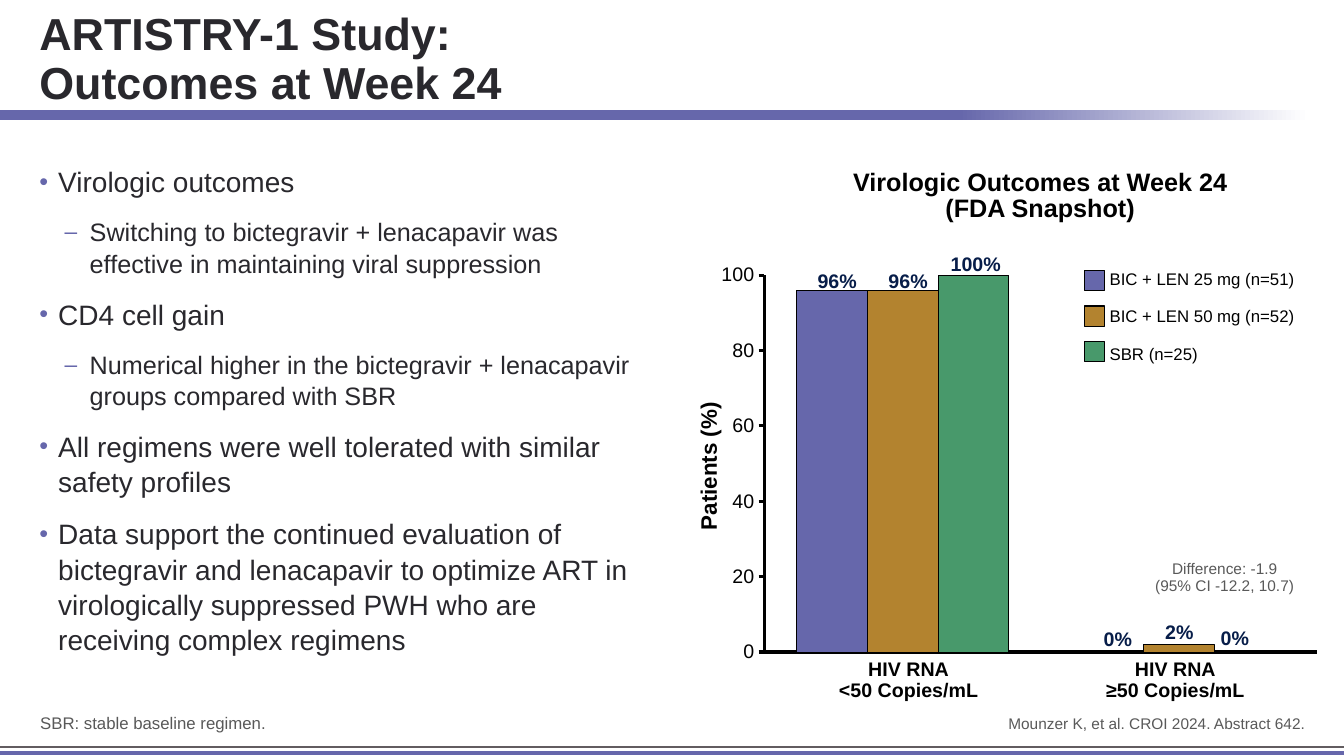
from lxml import etree
from pptx import Presentation
from pptx.chart.data import CategoryChartData as Data
from pptx.dml.color import RGBColor as RGB
from pptx.enum.chart import XL_CHART_TYPE as Kind, XL_TICK_LABEL_POSITION as Lab, XL_TICK_MARK as Tick
from pptx.enum.shapes import MSO_CONNECTOR as Conn, MSO_SHAPE as Geo
from pptx.enum.text import MSO_ANCHOR as Anchor, PP_ALIGN as Align
from pptx.oxml import parse_xml
from pptx.oxml.ns import nsdecls, qn
from pptx.util import Pt

FACE = "Arial"
PURPLE, GOLD, GREEN = "6667AB", "B3832F", "48996B"
BLACK, DARK, GREY, NAVY = "000000", "29282D", "595959", "071D49"
L, C, R = Align.LEFT, Align.CENTER, Align.RIGHT

BODY = [
    (0, "Virologic outcomes"),
    (1, "Switching to bictegravir + lenacapavir was effective in maintaining viral suppression"),
    (0, "CD4 cell gain"),
    (1, "Numerical higher in the bictegravir + lenacapavir groups compared with SBR"),
    (0, "All regimens were well tolerated with similar safety profiles"),
    (0, "Data support the continued evaluation of bictegravir and lenacapavir to optimize ART in "
        "virologically suppressed PWH who are receiving complex regimens"),
]
LEVELS = [
    dict(mark="•", size=20, left=13.5, hang=13.5),
    dict(mark="–", size=18, left=36, hang=18),
]
ARMS = [
    ("BIC + LEN 25 mg (n=51)", PURPLE, (96, 0)),
    ("BIC + LEN 50 mg (n=52)", GOLD, (96, 2)),
    ("SBR (n=25)", GREEN, (100, 0)),
]
CATS = ["HIV RNA <50 Copies/mL", "HIV RNA ≥50 Copies/mL"]
TEXTS = [
    (["ARTISTRY-1 Study:\nOutcomes at Week 24"], (21, 15, 923, 66.4),
     dict(size=32, color=DARK, bold=True, anchor=Anchor.BOTTOM)),
    (["Patients (%)"], (373.7, 319.7, 264.2, 26.6), dict(size=16, bold=True, align=C, turn=270, space=1)),
    (["Virologic Outcomes at Week 24", "(FDA Snapshot)"], (550, 118.8, 386, 44.6),
     dict(size=18, bold=True, align=C, space=0.85)),
    (["HIV RNA", "<50 Copies/mL"], (586, 467.3, 126, 38), dict(size=14, bold=True, align=C)),
    (["HIV RNA", "≥50 Copies/mL"], (759.6, 467.3, 160, 38), dict(size=14, bold=True, align=C)),
    ([arm[0] for arm in ARMS], (785.5, 190.1, 167, 72.7), dict(size=12, before=13.65)),
    (["Difference: -1.9", "(95% CI -12.2, 10.7)"], (815.8, 397.4, 118, 31),
     dict(size=11, color=GREY, align=C)),
    (["SBR: stable baseline regimen."], (21.6, 506.9, 398, 20), dict(size=12, color=GREY)),
    (["Mounzer K, et al. CROI 2024. Abstract 642."], (480.2, 508.3, 459.4, 19.4),
     dict(size=11, color=GREY, align=R)),
]
TAGS = [("96%", 598, 190.8), ("96%", 648.7, 190.8), ("100%", 697, 179.3),
        ("0%", 798.5, 447.1), ("2%", 842.4, 442.1), ("0%", 882, 446.4)]
TAG_W, TAG_H = 60, 21.6
RULES = [(533.5, "625C60", 1.75), (537.8, PURPLE, 3.25)]
PLOT = dict(x=0.09, y=0.046, w=0.892, h=0.908)


def hue(code):
    return RGB.from_string(code)


def put(obj, **vals):
    for key, val in vals.items():
        setattr(obj, key, val)


def pen(line, code, width):
    line.color.rgb = hue(code)
    line.width = Pt(width)


def ink(font, size, color=BLACK, bold=False):
    put(font, name=FACE, size=Pt(size), bold=bold)
    font.color.rgb = hue(color)


def block(shape, box, fill=None):
    shape.shadow.inherit = False
    if fill:
        shape.fill.solid()
        shape.fill.fore_color.rgb = hue(fill)


def write(lines, box, size, color=BLACK, bold=False, align=L, space=0.9,
          before=0, turn=0, anchor=Anchor.TOP):
    item = slide.shapes.add_textbox(*map(Pt, box))
    item.rotation = turn
    frame = item.text_frame
    put(frame, word_wrap=True, vertical_anchor=anchor)
    for i, line in enumerate(lines):
        para = frame.paragraphs[0] if i == 0 else frame.add_paragraph()
        para.text = line
        put(para, alignment=align, line_spacing=space, space_before=Pt(before if i else 0))
        for run in para.runs:
            ink(run.font, size, color, bold)
    return frame


def bullet(para, level):
    look = LEVELS[level]
    for run in para.runs:
        run.font.size = Pt(look["size"])
    para.level = level
    props = para._p.get_or_add_pPr()
    props.set("marL", str(Pt(look["left"])))
    props.set("indent", str(-Pt(look["hang"])))
    tint = etree.SubElement(props, qn("a:buClr"))
    etree.SubElement(tint, qn("a:srgbClr"), val=PURPLE)
    etree.SubElement(props, qn("a:buSzPct"), val="90000")
    etree.SubElement(props, qn("a:buFont"), typeface=FACE)
    etree.SubElement(props, qn("a:buChar"), char=look["mark"])


def draw_chart():
    data = Data()
    data.categories = CATS
    for name, _, vals in ARMS:
        data.add_series(name, vals)
    box = map(Pt, (506.2, 182.9, 442.8, 296.6))
    chart = slide.shapes.add_chart(Kind.COLUMN_CLUSTERED, *box, data).chart
    put(chart, has_legend=False, has_title=False)
    ink(chart.font, 14)
    plot = chart.plots[0]
    put(plot, gap_width=91, overlap=0, vary_by_categories=False)
    for bars, (_, code, _) in zip(plot.series, ARMS):
        bars.format.fill.solid()
        bars.format.fill.fore_color.rgb = hue(code)
        pen(bars.format.line, BLACK, 0.75)
    cat, val = chart.category_axis, chart.value_axis
    put(cat, tick_label_position=Lab.NONE, major_tick_mark=Tick.NONE)
    put(val, minimum_scale=0, maximum_scale=100, major_unit=20, major_tick_mark=Tick.OUTSIDE)
    ink(val.tick_labels.font, 14)
    for axis in (cat, val):
        put(axis, has_major_gridlines=False, minor_tick_mark=Tick.NONE)
        pen(axis.format.line, BLACK, 2.25)
    area = chart._chartSpace.chart.plotArea
    for old in area.findall(qn("c:layout")):
        area.remove(old)
    modes = "".join(f'<c:{k}Mode val="edge"/>' for k in "xy")
    spots = "".join(f'<c:{k} val="{v}"/>' for k, v in PLOT.items())
    area.insert(0, parse_xml(
        f'<c:layout {nsdecls("c")}><c:manualLayout><c:layoutTarget val="inner"/>'
        f'{modes}{spots}</c:manualLayout></c:layout>'))


deck = Presentation()
put(deck, slide_width=Pt(960), slide_height=Pt(540))
slide = deck.slides.add_slide(deck.slide_layouts[6])

band = slide.shapes.add_shape(Geo.RECTANGLE, *map(Pt, (-0.7, 78.5, 964.8, 7.2)))
band.shadow.inherit = False
band.line.fill.background()
band.fill.gradient()
band.fill.gradient_angle = 180
for stop, (pos, code) in zip(band.fill.gradient_stops, [(0.03, "FFFFFF"), (0.29, PURPLE)]):
    stop.position = pos
    stop.color.rgb = hue(code)

for y, code, width in RULES:
    rule = slide.shapes.add_connector(Conn.STRAIGHT, Pt(-0.7), Pt(y), Pt(960.5), Pt(y))
    pen(rule.line, code, width)
    etree.SubElement(rule._element.spPr, qn("a:effectLst"))

draw_chart()
for lines, box, look in TEXTS:
    write(lines, box, **look)
for tag, mid, top in TAGS:
    write([tag], (mid - TAG_W / 2, top, TAG_W, TAG_H), 14, NAVY, True, C, 0.85)

body = write([text for _, text in BODY], (21, 113, 439, 381.6), 20, DARK, space=1.05, before=12)
for para, (level, _) in zip(body.paragraphs, BODY):
    bullet(para, level)

for i, (_, code, _) in enumerate(ARMS):
    key = slide.shapes.add_shape(Geo.RECTANGLE, *map(Pt, (774.7, 193 + 25.6 * i, 14.4, 14.4)))
    block(key, None, code)
    pen(key.line, BLACK, 0.75)

deck.save("out.pptx")
